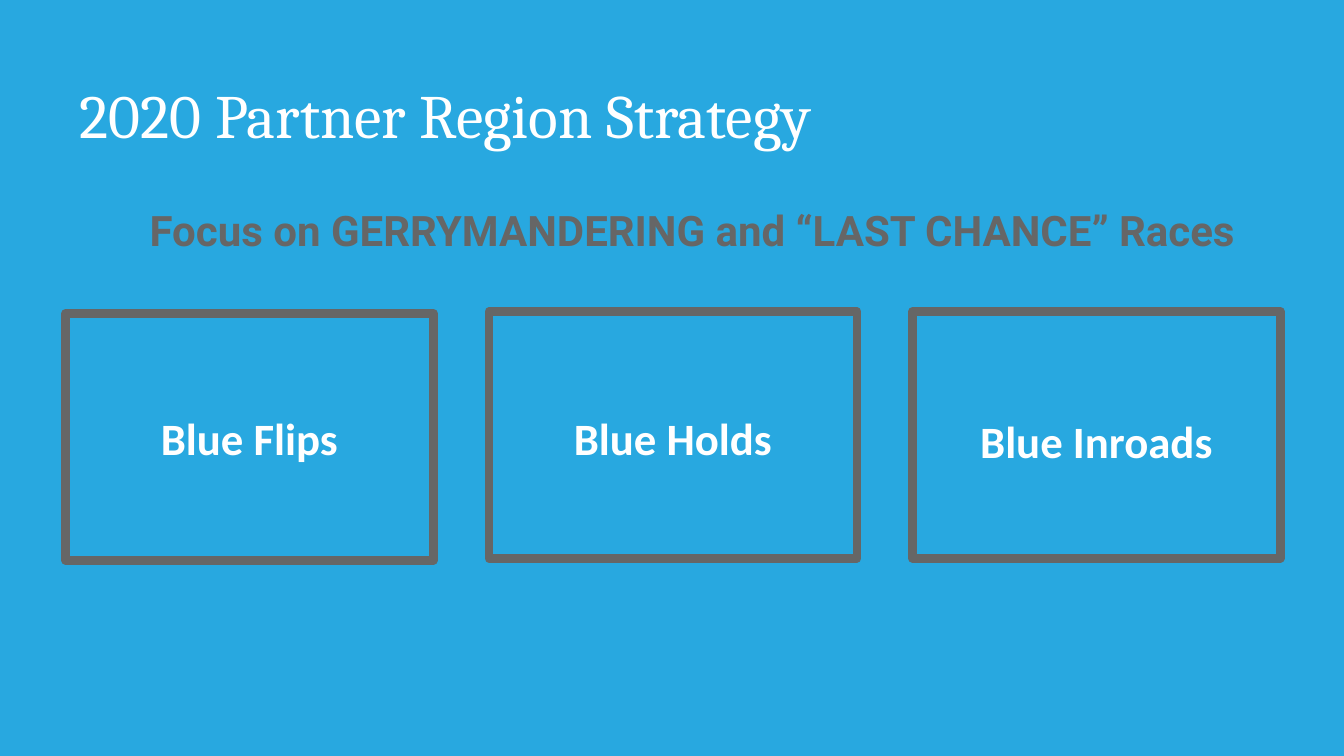
from dataclasses import dataclass

from pptx import Presentation
from pptx.dml.color import RGBColor
from pptx.enum import shapes, text
from pptx.util import Inches, Pt


@dataclass(frozen=True)
class Theme:
    background: RGBColor = RGBColor(0x28, 0xA8, 0xE0)
    light: RGBColor = RGBColor(0xFF, 0xFF, 0xFF)
    grey: RGBColor = RGBColor(0x66, 0x66, 0x66)
    title_font: str = "Cambria"
    focus_font: str = "Roboto"
    label_font: str = "Calibri"
    title_size: int = 44
    focus_size: int = 30
    label_size: int = 32
    frame_width: int = 6


def write_text(shape, content, *, font, size, color, bold=False, inset=0.05,
               align=text.PP_ALIGN.CENTER, anchor=text.MSO_ANCHOR.MIDDLE):
    frame = shape.text_frame
    frame.word_wrap = True
    frame.auto_size = text.MSO_AUTO_SIZE.NONE
    frame.vertical_anchor = anchor
    frame.margin_left = frame.margin_right = Inches(inset)
    frame.margin_top = frame.margin_bottom = Inches(inset)
    paragraph = frame.paragraphs[0]
    paragraph.alignment = align
    run = paragraph.add_run()
    run.text = content
    run.font.name = font
    run.font.size = Pt(size)
    run.font.bold = bold
    run.font.color.rgb = color


class SlideBuilder:
    def __init__(self, presentation, theme):
        self.theme = theme
        self.slide = presentation.slides.add_slide(presentation.slide_layouts.get_by_name("Title Only"))
        fill = self.slide.background.fill
        fill.solid()
        fill.fore_color.rgb = theme.background

    def title(self, content, left, top, width, height):
        shape = self.slide.shapes.title
        shape.left, shape.top = Inches(left), Inches(top)
        shape.width, shape.height = Inches(width), Inches(height)
        write_text(shape, content, font=self.theme.title_font,
                   size=self.theme.title_size, color=self.theme.light,
                   align=text.PP_ALIGN.LEFT)

    def text_box(self, content, left, top, width, height, **style):
        shape = self.slide.shapes.add_textbox(
            Inches(left), Inches(top), Inches(width), Inches(height))
        write_text(shape, content, **style)

    def frame(self, left, top, width, height):
        """Draw an unfilled rectangle with a thick outline."""
        shape = self.slide.shapes.add_shape(
            shapes.MSO_SHAPE.RECTANGLE,
            Inches(left), Inches(top), Inches(width), Inches(height))
        shape.shadow.inherit = False
        shape.fill.background()
        shape.line.color.rgb = self.theme.grey
        shape.line.width = Pt(self.theme.frame_width)


def main():
    presentation = Presentation()
    presentation.slide_width = Inches(13.33)
    presentation.slide_height = Inches(7.5)
    theme = Theme()
    builder = SlideBuilder(presentation, theme)

    builder.title("2020 Partner Region Strategy", 0.74, 0.4, 11.5, 1.45)
    builder.text_box("Focus on GERRYMANDERING and “LAST CHANCE” Races",
                     0.73, 1.98, 12.28, 0.77,
                     font=theme.focus_font, size=theme.focus_size,
                     color=theme.grey, bold=True, anchor=text.MSO_ANCHOR.TOP)

    frame_width, frame_height, label_height = 3.65, 2.45, 1.24
    first_left, pitch = 0.65, 4.2
    strategies = [  # label, label width, frame top, label top
        ("Blue Flips", 2.16, 3.11, 3.72),
        ("Blue Holds", 3.09, 3.09, 3.72),
        ("Blue Inroads", 2.74, 3.09, 3.75),
    ]
    for column, (label, label_width, frame_top, label_top) in enumerate(strategies):
        left = first_left + column * pitch
        builder.frame(left, frame_top, frame_width, frame_height)
        builder.text_box(label, left + (frame_width - label_width) / 2, label_top,
                         label_width, label_height,
                         font=theme.label_font, size=theme.label_size,
                         color=theme.light, bold=True, inset=0.1)

    presentation.save("out.pptx")


if __name__ == "__main__":
    main()
